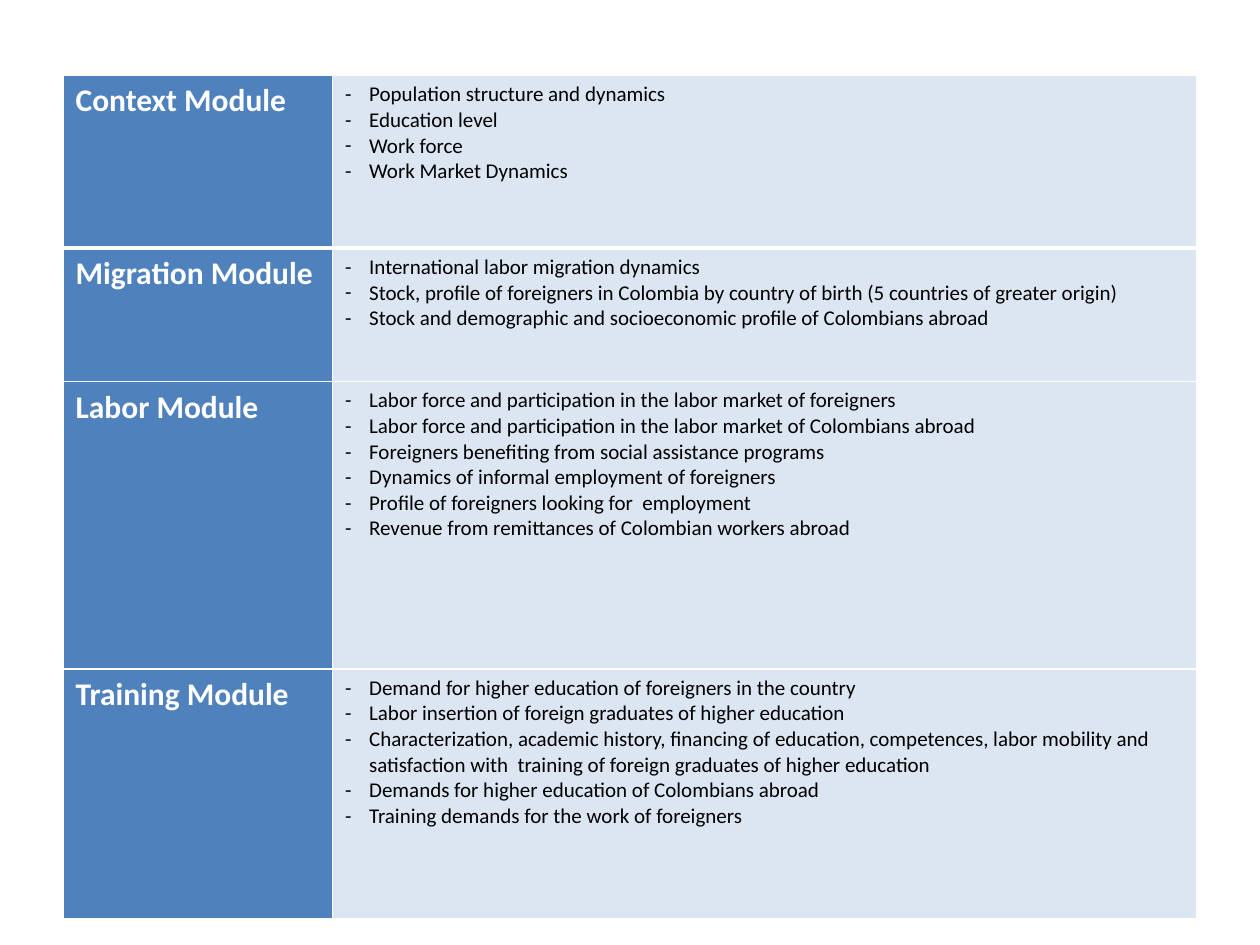
import lxml.etree
import pptx
import pptx.dml.color
import pptx.oxml.ns
import pptx.util

Inches = pptx.util.Inches
Pt = pptx.util.Pt

WHITE, BLACK, BLUE, PALE_BLUE = "FFFFFF", "000000", "4F81BD", "DCE6F2"
COLUMN_WIDTHS = (2.14, 6.86)
MODULES = [
    ("Context Module", 1.37, [
        "Population structure and dynamics",
        "Education level",
        "Work force",
        "Work Market Dynamics",
    ]),
    ("Migration Module", 1.06, [
        "International labor migration dynamics",
        "Stock, profile of foreigners in Colombia by country of birth (5 countries of greater origin)",
        "Stock and demographic and socioeconomic profile of Colombians abroad",
    ]),
    ("Labor Module", 2.28, [
        "Labor force and participation in the labor market of foreigners",
        "Labor force and participation in the labor market of Colombians abroad",
        "Foreigners benefiting from social assistance programs",
        "Dynamics of informal employment of foreigners",
        "Profile of foreigners looking for  employment",
        "Revenue from remittances of Colombian workers abroad",
    ]),
    ("Training Module", 1.98, [
        "Demand for higher education of foreigners in the country",
        "Labor insertion of foreign graduates of higher education",
        "Characterization, academic history, financing of education, competences, labor mobility and "
        "satisfaction with  training of foreign graduates of higher education",
        "Demands for higher education of Colombians abroad",
        "Training demands for the work of foreigners",
    ]),
]


def color(value):
    """Return the colour for a hex string."""
    return pptx.dml.color.RGBColor.from_string(value)


def add_element(parent, tag, **attributes):
    """Append a drawing element with the given attributes."""
    element = lxml.etree.SubElement(parent, pptx.oxml.ns.qn(tag))
    for name, value in attributes.items():
        element.set(name, str(value))
    return element


def add_dash(para):
    """Give a paragraph a hanging dash bullet."""
    properties = para._p.get_or_add_pPr()
    properties.set("marL", str(Inches(0.19)))
    properties.set("indent", str(-Inches(0.19)))
    add_element(properties, "a:buFont", typeface="Calibri")
    add_element(properties, "a:buChar", char="-")


def style_cell(cell, fill, top, bottom):
    """Set the white borders and the fill of a cell."""
    properties = cell._tc.get_or_add_tcPr()
    for side, width in (("L", 1), ("R", 1), ("T", top), ("B", bottom)):
        line = add_element(properties, "a:ln" + side, w=Pt(width))
        add_element(add_element(line, "a:solidFill"), "a:srgbClr", val=WHITE)
    cell.fill.solid()
    cell.fill.fore_color.rgb = color(fill)


def write_cell(cell, lines, size, ink, bold, dashed):
    """Write one paragraph per line in a cell."""
    frame = cell.text_frame
    for index, line in enumerate(lines):
        para = frame.add_paragraph() if index else frame.paragraphs[0]
        para.text = line
        if dashed:
            add_dash(para)
        para.font.name = "Calibri"
        para.font.size = Pt(size)
        para.font.bold = bold
        para.font.color.rgb = color(ink)


def add_module_table(page, left, top, width, height):
    """Add the table of modules and their topics."""
    table = page.shapes.add_table(
        len(MODULES), len(COLUMN_WIDTHS),
        Inches(left), Inches(top), Inches(width), Inches(height)).table
    table.first_row = False
    table.horz_banding = False
    for column, column_width in zip(table.columns, COLUMN_WIDTHS):
        column.width = Inches(column_width)
    for index, (title, row_height, topics) in enumerate(MODULES):
        table.rows[index].height = Inches(row_height)
        name_cell, topic_cell = table.rows[index].cells
        top_line = 3 if index == 1 else 1
        bottom_line = 3 if index == 0 else 1
        style_cell(name_cell, BLUE, top_line, bottom_line)
        style_cell(topic_cell, PALE_BLUE, top_line, bottom_line)
        write_cell(name_cell, [title], 18, WHITE, True, False)
        write_cell(topic_cell, topics, 12, BLACK, False, True)


def main():
    """Build the slide and save it."""
    deck = pptx.Presentation()
    deck.slide_width, deck.slide_height = Inches(10), Inches(7.5)
    page = deck.slides.add_slide(deck.slide_layouts[6])
    add_module_table(page, 0.5, 0.6, 9, 6.69)
    deck.save("out.pptx")


if __name__ == "__main__":
    main()
